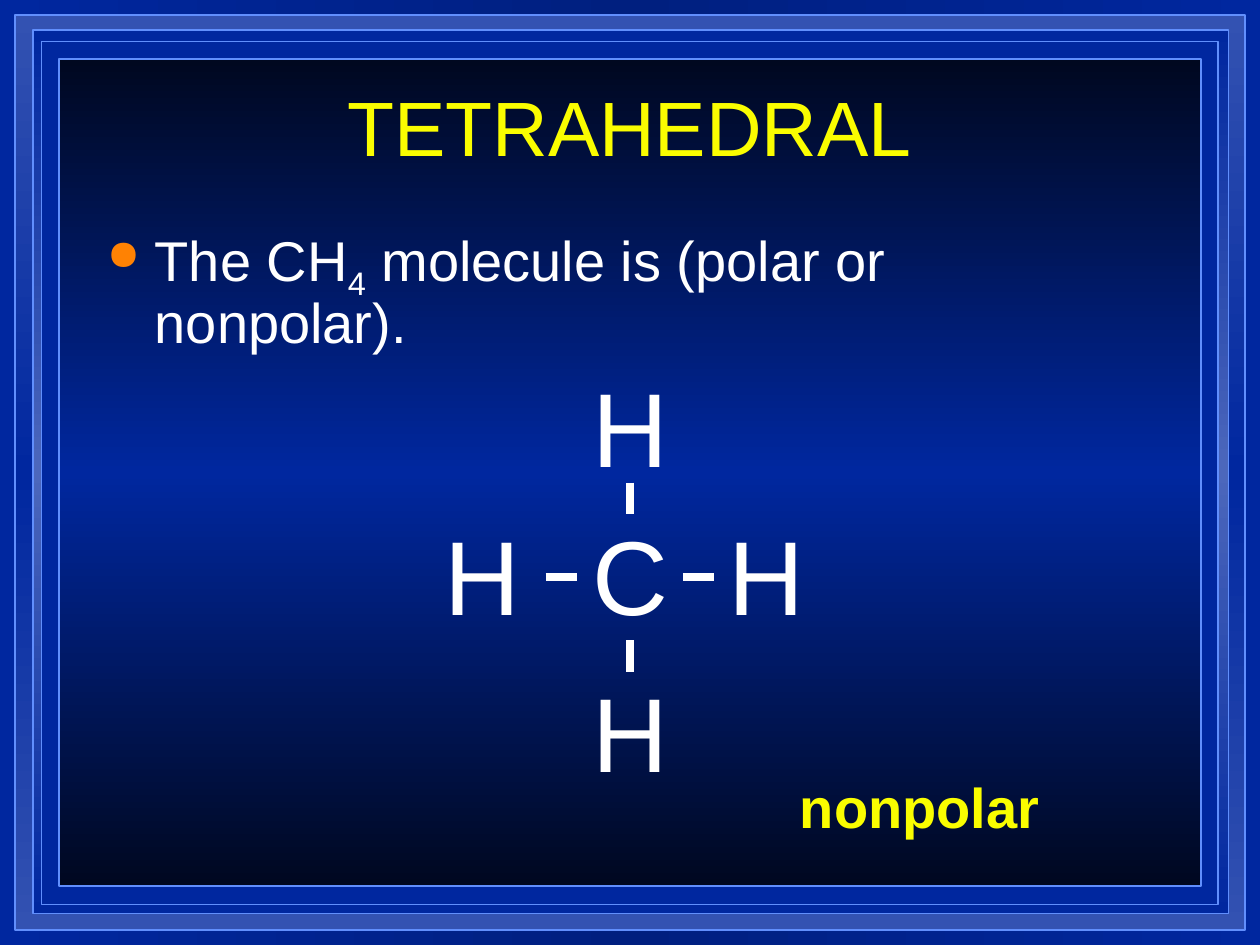
import copy

import lxml.etree
import pptx
import pptx.dml.color
import pptx.enum.shapes
import pptx.enum.text
import pptx.oxml.ns
import pptx.util

Inches = pptx.util.Inches
Pt = pptx.util.Pt
RGBColor = pptx.dml.color.RGBColor
qn = pptx.oxml.ns.qn
CENTER = pptx.enum.text.PP_ALIGN.CENTER
LEFT = pptx.enum.text.PP_ALIGN.LEFT

BLUE = RGBColor(0x00, 0x27, 0x9F)
DEEP_BLUE = RGBColor(0x00, 0x1F, 0x7F)
MID_BLUE = RGBColor(0x33, 0x52, 0xB2)
SOFT_BLUE = RGBColor(0x4C, 0x67, 0xBC)
NIGHT = RGBColor(0x00, 0x08, 0x20)
EDGE = RGBColor(0x61, 0x8F, 0xFD)
YELLOW = RGBColor(0xFA, 0xFD, 0x00)
WHITE = RGBColor(0xFF, 0xFF, 0xFF)
ORANGE = RGBColor(0xFF, 0x82, 0x03)


def paint_gradient(fill, element, outer, middle, angle):
    """Fill with a gradient running from outer through middle back to outer."""
    fill.gradient()
    fill.gradient_angle = angle
    stops = element.xpath(".//a:gsLst")[0]
    stops.insert(1, copy.deepcopy(stops[0]))
    for stop, color, position in zip(fill.gradient_stops, (outer, middle, outer), (0, 0.5, 1)):
        stop.color.rgb = color
        stop.position = position


def add_frame(slide, box, outer, middle):
    """Add one bordered rectangle of the nested frame."""
    frame = slide.shapes.add_shape(
        pptx.enum.shapes.MSO_SHAPE.RECTANGLE, *map(Inches, box))
    frame.shadow.inherit = False
    frame.line.color.rgb = EDGE
    frame.line.width = Pt(1)
    if outer == middle:
        frame.fill.solid()
        frame.fill.fore_color.rgb = outer
    else:
        paint_gradient(frame.fill, frame._element, outer, middle, 90)


def add_backdrop(slide):
    """Paint the background and the nested frames."""
    paint_gradient(slide.background.fill, slide._element, BLUE, DEEP_BLUE, 0)
    add_frame(slide, (0.12, 0.12, 9.76, 7.26), MID_BLUE, BLUE)
    add_frame(slide, (0.26, 0.24, 9.49, 7.01), BLUE, SOFT_BLUE)
    add_frame(slide, (0.33, 0.33, 9.34, 6.85), BLUE, BLUE)
    add_frame(slide, (0.47, 0.47, 9.06, 6.56), NIGHT, BLUE)


def add_text(slide, box, text, size, color, align=CENTER, bold=False):
    """Add a wrapped one-paragraph text box and return its paragraph."""
    frame = slide.shapes.add_textbox(*map(Inches, box)).text_frame
    frame.word_wrap = True
    paragraph = frame.paragraphs[0]
    paragraph.alignment = align
    paragraph.add_run().text = text
    paragraph.font.name = "Arial"
    paragraph.font.size = Pt(size)
    paragraph.font.color.rgb = color
    paragraph.font.bold = bold
    return paragraph


def add_statement(slide, box):
    """Add the bulleted statement with the formula's subscript."""
    statement = add_text(slide, box, "The CH", 32, WHITE, LEFT)
    statement.line_spacing = 0.9
    subscript = statement.add_run()
    subscript.text = "4"
    subscript.font._element.set("baseline", "-25000")
    statement.add_run().text = " molecule is (polar or nonpolar)."

    properties = statement._p.get_or_add_pPr()
    properties.set("marL", str(Inches(0.38)))
    properties.set("indent", str(Inches(-0.38)))
    bullet_color = lxml.etree.Element(qn("a:buClr"))
    lxml.etree.SubElement(bullet_color, qn("a:srgbClr"), val=str(ORANGE))
    bullet_size = lxml.etree.Element(qn("a:buSzPct"), val="75000")
    bullet = lxml.etree.Element(qn("a:buChar"), char="●")
    defaults = properties.find(qn("a:defRPr"))
    for part in (bullet_color, bullet_size, bullet):
        defaults.addprevious(part)


def add_bond(slide, start, end):
    """Add a thick white bond between two points."""
    bond = slide.shapes.add_connector(
        pptx.enum.shapes.MSO_CONNECTOR.STRAIGHT, *map(Inches, start + end))
    bond.line.color.rgb = WHITE
    bond.line.width = Pt(4.5)
    lxml.etree.SubElement(bond._element.spPr, qn("a:effectLst"))


def add_molecule(slide, left, top):
    """Draw the methane molecule inside the box starting at left, top."""
    atoms = (("C", 1.17, 1.17), ("H", 2.25, 1.17), ("H", 0, 1.17),
             ("H", 1.17, 0), ("H", 1.17, 2.42))
    for symbol, x, y in atoms:
        add_text(slide, (left + x, top + y, 1.5, 1.1), symbol, 60, WHITE)
    length = 0.25
    for y in (1, 2.25):
        add_bond(slide, (left + 1.92, top + y), (left + 1.92, top + y + length))
    for x in (2.34, 1.25):
        add_bond(slide, (left + x, top + 1.75), (left + x + length, top + 1.75))


def main():
    """Build the slide and save it."""
    deck = pptx.Presentation()
    deck.slide_width = Inches(10)
    deck.slide_height = Inches(7.5)
    slide = deck.slides.add_slide(deck.slide_layouts[6])
    add_backdrop(slide)
    add_text(slide, (0.75, 0.58, 8.5, 0.83), "TETRAHEDRAL", 44, YELLOW)
    add_molecule(slide, 3.08, 2.83)
    add_statement(slide, (0.75, 1.75, 8.5, 1.08))
    add_text(slide, (6.25, 6.08, 2.33, 0.63), "nonpolar", 32, YELLOW, LEFT, True)
    deck.save("out.pptx")


if __name__ == "__main__":
    main()
